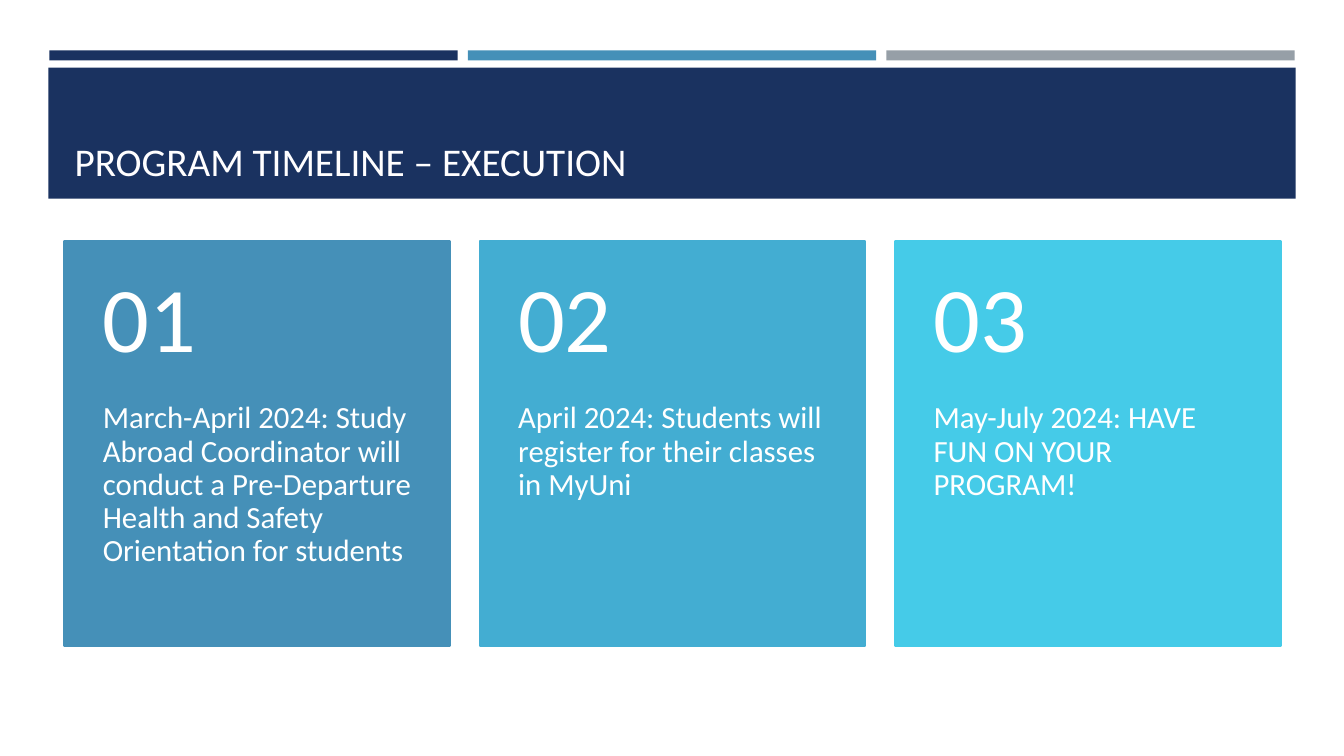
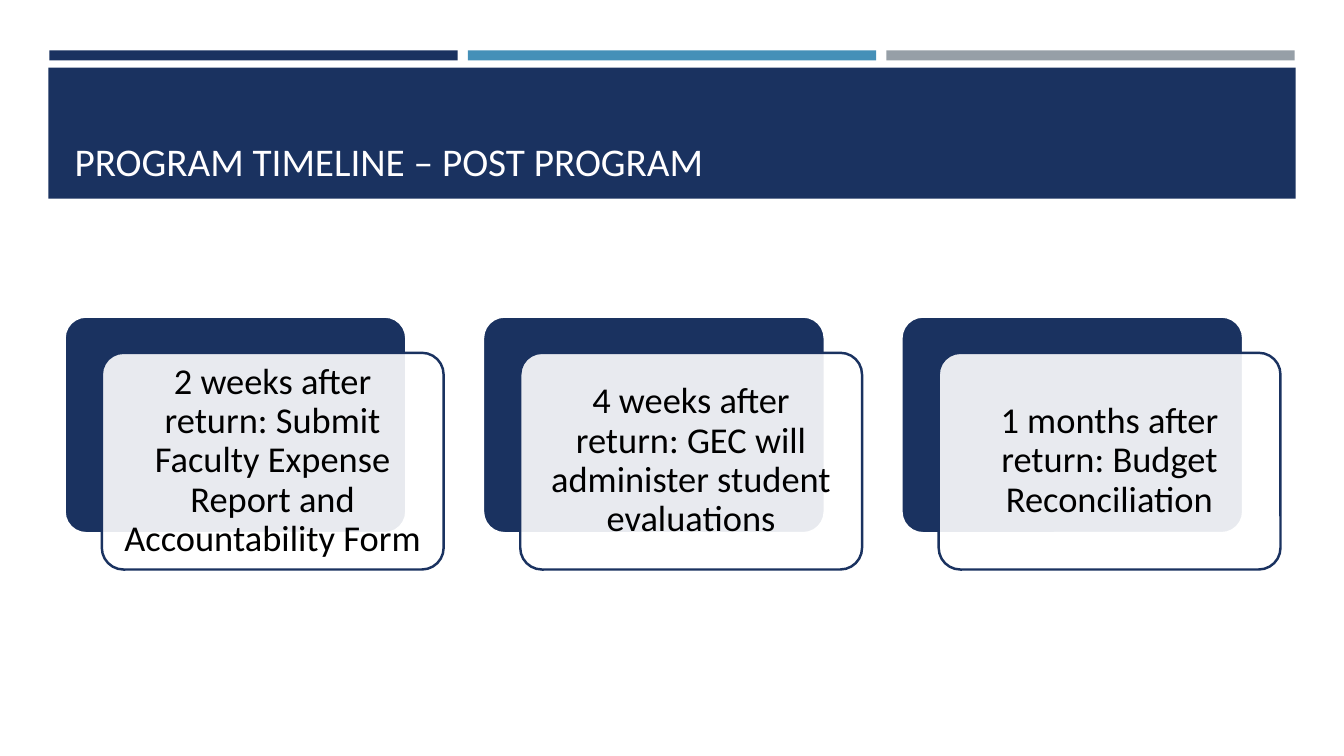
"""Build two program timeline slides: execution and post program."""
from lxml import etree
from pptx import Presentation
from pptx.dml.color import RGBColor
from pptx.enum.shapes import MSO_SHAPE
from pptx.enum.text import MSO_ANCHOR, MSO_AUTO_SIZE, PP_ALIGN
from pptx.oxml.ns import qn
from pptx.util import Inches, Pt

RECTANGLE, ROUNDED = MSO_SHAPE.RECTANGLE, MSO_SHAPE.ROUNDED_RECTANGLE
TOP, MIDDLE, BOTTOM = MSO_ANCHOR.TOP, MSO_ANCHOR.MIDDLE, MSO_ANCHOR.BOTTOM
LEFT, CENTER = PP_ALIGN.LEFT, PP_ALIGN.CENTER
NO_FIT = MSO_AUTO_SIZE.NONE

FONT = "Calibri"
NAVY, BLUE, GRAY, WHITE, BLACK = "1A3260", "4590B8", "969FA7", "FFFFFF", "000000"
MARGIN, CONTENT_WIDTH = 0.64, 12.06

EXECUTION_STEPS = [
    ("01", BLUE, "March-April 2024: Study Abroad Coordinator will conduct a "
                 "Pre-Departure Health and Safety Orientation for students"),
    ("02", "43ADD2", "April 2024: Students will register for their classes in MyUni"),
    ("03", "45CBE8", "May-July 2024: HAVE FUN ON YOUR PROGRAM!"),
]
POST_PROGRAM_STEPS = [
    "2 weeks after return: Submit Faculty Expense Report and Accountability Form",
    "4 weeks after return: GEC will administer student evaluations",
    "1 months after return: Budget Reconciliation",
]


def color(value):
    return RGBColor.from_string(value)


def write(shape, text, size, ink=WHITE, align=LEFT, anchor=TOP,
          insets=(0.1, 0.05, 0.1, 0.05), spacing=0.9):
    frame = shape.text_frame
    frame.word_wrap = True
    frame.auto_size = NO_FIT
    frame.vertical_anchor = anchor
    (frame.margin_left, frame.margin_top,
     frame.margin_right, frame.margin_bottom) = map(Inches, insets)
    para = frame.paragraphs[0]
    para.alignment = align
    para.line_spacing = spacing
    span = para.add_run()
    span.text = text
    span.font.name = FONT
    span.font.size = Pt(size)
    span.font.color.rgb = color(ink)


def column_lefts(width, count=3):
    pitch = (CONTENT_WIDTH - width) / (count - 1)
    return [MARGIN + column * pitch for column in range(count)]


class TimelineDeck:
    """Hold the shared style and the current page."""

    def __init__(self):
        self.deck = Presentation()
        self.deck.slide_width, self.deck.slide_height = Inches(13.33), Inches(7.5)
        self.layout = self.deck.slide_layouts.get_by_name("Title Only")
        self.page = None

    def start_page(self, title):
        first = self.page is None
        self.page = self.deck.slides.add_slide(self.layout)
        if first:
            self.decorate_layout()
        write(self.page.shapes.title, title, 28, ink="FFFEFF", anchor=BOTTOM, spacing=1)

    def decorate_layout(self):
        """Move the bands behind the layout's title, so that every page shares them."""
        bands = [self.box(0.49 + 4.15 * column, 0.5, 4.05, 0.1, fill)
                 for column, fill in enumerate((NAVY, BLUE, GRAY))]
        bands.append(self.box(0.48, 0.67, 12.37, 1.3, NAVY))
        for position, band in enumerate(bands, start=2):
            self.layout.shapes.element.insert(position, band.element)
        title = self.layout.placeholders[0]
        title.left, title.top = Inches(MARGIN), Inches(0.77)
        title.width, title.height = Inches(CONTENT_WIDTH), Inches(1.11)

    def box(self, left, top, width, height, fill, line=None, kind=RECTANGLE, opacity=None):
        shape = self.page.shapes.add_shape(
            kind, Inches(left), Inches(top), Inches(width), Inches(height))
        shape.shadow.inherit = False
        shape.fill.solid()
        shape.fill.fore_color.rgb = color(fill)
        if opacity is not None:
            tint = shape.element.spPr.find(qn("a:solidFill"))[0]
            etree.SubElement(tint, qn("a:alpha")).set("val", str(opacity * 1000))
        if line:
            shape.line.color.rgb = color(line)
            shape.line.width = Pt(1.75)
        else:
            shape.line.fill.background()
        if kind == ROUNDED:
            shape.adjustments[0] = 0.1
        return shape

    def label(self, left, top, width, height, text, size, **style):
        shape = self.page.shapes.add_textbox(
            Inches(left), Inches(top), Inches(width), Inches(height))
        write(shape, text, size, **style)

    def numbered_card(self, left, width, number, fill, text):
        self.box(left, 2.39, width, 4.02, fill, line=fill)
        self.label(left, 3.99, width, 2.41, text, 22, insets=(0.38, 0, 0.38, 0.36))
        self.label(left, 2.39, width, 1.61, number, 66, anchor=MIDDLE,
                   insets=(0.38, 0.18, 0.38, 0.18))

    def layered_card(self, left, width, offset, text):
        self.box(left, 3.14, width, 2.15, NAVY, line=WHITE, kind=ROUNDED)
        front = self.box(left + offset, 3.5, width, 2.15, WHITE, line=NAVY,
                         kind=ROUNDED, opacity=90)
        write(front, text, 26, ink=BLACK, align=CENTER, anchor=MIDDLE, insets=(0.11,) * 4)


def main():
    timeline = TimelineDeck()

    timeline.start_page("PROGRAM TIMELINE – EXECUTION")
    card_width = 3.82
    for left, step in zip(column_lefts(card_width), EXECUTION_STEPS):
        timeline.numbered_card(left, card_width, *step)

    timeline.start_page("PROGRAM TIMELINE – POST PROGRAM")
    card_width, offset = 3.39, 0.37
    for left, text in zip(column_lefts(card_width + offset), POST_PROGRAM_STEPS):
        timeline.layered_card(left, card_width, offset, text)

    timeline.deck.save("out.pptx")


if __name__ == "__main__":
    main()
